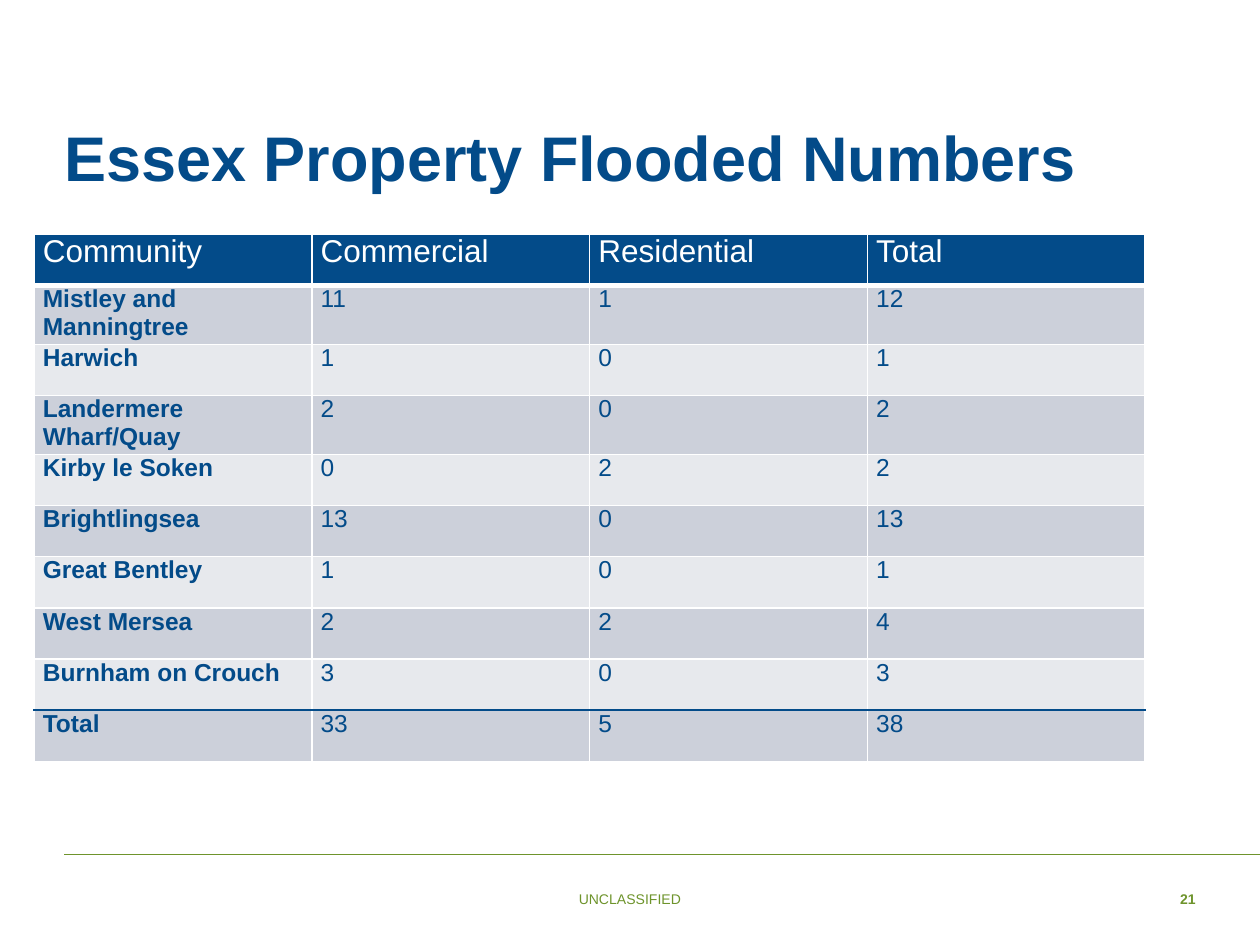
from lxml.etree import SubElement
from pptx import Presentation
from pptx.dml.color import RGBColor
from pptx.enum.shapes import MSO_CONNECTOR
from pptx.enum.text import MSO_ANCHOR, PP_ALIGN
from pptx.oxml.ns import qn
from pptx.util import Inches, Pt

NAVY = RGBColor(0x03, 0x4B, 0x89)
GREEN = RGBColor(0x6E, 0x94, 0x2C)
WHITE = RGBColor(0xFF, 0xFF, 0xFF)
DARK = RGBColor(0xCC, 0xD0, 0xDA)
LIGHT = RGBColor(0xE7, 0xE9, 0xED)

TITLE = "Essex Property Flooded Numbers"
HEADS = ("Community", "Commercial", "Residential", "Total")
FLOODS = [
    ("Mistley and Manningtree", 11, 1, 12),
    ("Harwich", 1, 0, 1),
    ("Landermere Wharf/Quay", 2, 0, 2),
    ("Kirby le Soken", 0, 2, 2),
    ("Brightlingsea", 13, 0, 13),
    ("Great Bentley", 1, 0, 1),
    ("West Mersea", 2, 2, 4),
    ("Burnham on Crouch", 3, 0, 3),
    ("Total", 33, 5, 38),
]
WIDE, HIGH = 10, 7.5
MARGIN = 0.51
INNER = WIDE - 2 * MARGIN
FOOT, FOOT_H = 6.78, 0.42
NUM_W = 0.43
TABLE = (0.27, 1.86, 8.82, 4.06)


def style(para, size, color, bold=False):
    font = para.font
    font.name, font.size, font.bold = "Arial", Pt(size), bold
    font.color.rgb = color


def fill_frame(shape, text, align, spacing):
    """Put one bottom-anchored line of text in a frame without insets."""
    frame = shape.text_frame
    frame.word_wrap = True
    frame.vertical_anchor = MSO_ANCHOR.BOTTOM
    frame.margin_left = frame.margin_right = 0
    frame.margin_top = frame.margin_bottom = 0
    para = frame.paragraphs[0]
    para.text, para.alignment, para.line_spacing = text, align, spacing
    return para


def edge(cell, side, color, width):
    line = SubElement(cell._tc.get_or_add_tcPr(), qn(f"a:ln{side}"), w=str(Pt(width)))
    SubElement(SubElement(line, qn("a:solidFill")), qn("a:srgbClr"), val=str(color))


def add_title(slide):
    title = slide.shapes.title
    title.left, title.top = Inches(MARGIN), Inches(MARGIN)
    title.width, title.height = Inches(INNER), Inches(1.04)
    style(fill_frame(title, TITLE, PP_ALIGN.LEFT, 0.9), 36, NAVY, True)


def add_table(slide):
    rows = [HEADS, *FLOODS]
    last = len(rows) - 1
    table = slide.shapes.add_table(len(rows), len(HEADS), *map(Inches, TABLE)).table
    for r, row in enumerate(rows):
        head = r == 0
        back = NAVY if head else DARK if r % 2 else LIGHT
        edges = {side: (WHITE, 1) for side in "LRTB"}
        if head:
            edges["B"] = (WHITE, 3)
        elif r == last - 1:
            edges["B"] = (NAVY, 1)
        elif r == last:
            edges["T"] = (NAVY, 1)
        for c, value in enumerate(row):
            cell = table.cell(r, c)
            cell.text = str(value)
            cell.margin_left = cell.margin_right = Inches(0.07)
            cell.margin_top = cell.margin_bottom = 0
            for side, look in edges.items():
                edge(cell, side, *look)
            cell.fill.solid()
            cell.fill.fore_color.rgb = back
            style(cell.text_frame.paragraphs[0], 18 if head else 14,
                  WHITE if head else NAVY, c == 0 and not head)


def add_footer(slide):
    rule = slide.shapes.add_connector(
        MSO_CONNECTOR.STRAIGHT, Inches(MARGIN), Inches(FOOT), Inches(WIDE), Inches(FOOT))
    rule.line.color.rgb, rule.line.width = GREEN, Pt(0.5)
    SubElement(rule._element.spPr, qn("a:effectLst"))
    for text, width, align, bold in (
        ("UNCLASSIFIED", INNER, PP_ALIGN.CENTER, False),
        ("21", NUM_W, PP_ALIGN.RIGHT, True),
    ):
        left = WIDE - MARGIN - width
        box = slide.shapes.add_textbox(*map(Inches, (left, FOOT, width, FOOT_H)))
        style(fill_frame(box, text, align, 0.95), 8, GREEN, bold)


def main():
    deck = Presentation()
    deck.slide_width, deck.slide_height = Inches(WIDE), Inches(HIGH)
    slide = deck.slides.add_slide(deck.slide_layouts[5])
    add_footer(slide)
    add_title(slide)
    add_table(slide)
    deck.save("out.pptx")


if __name__ == "__main__":
    main()
